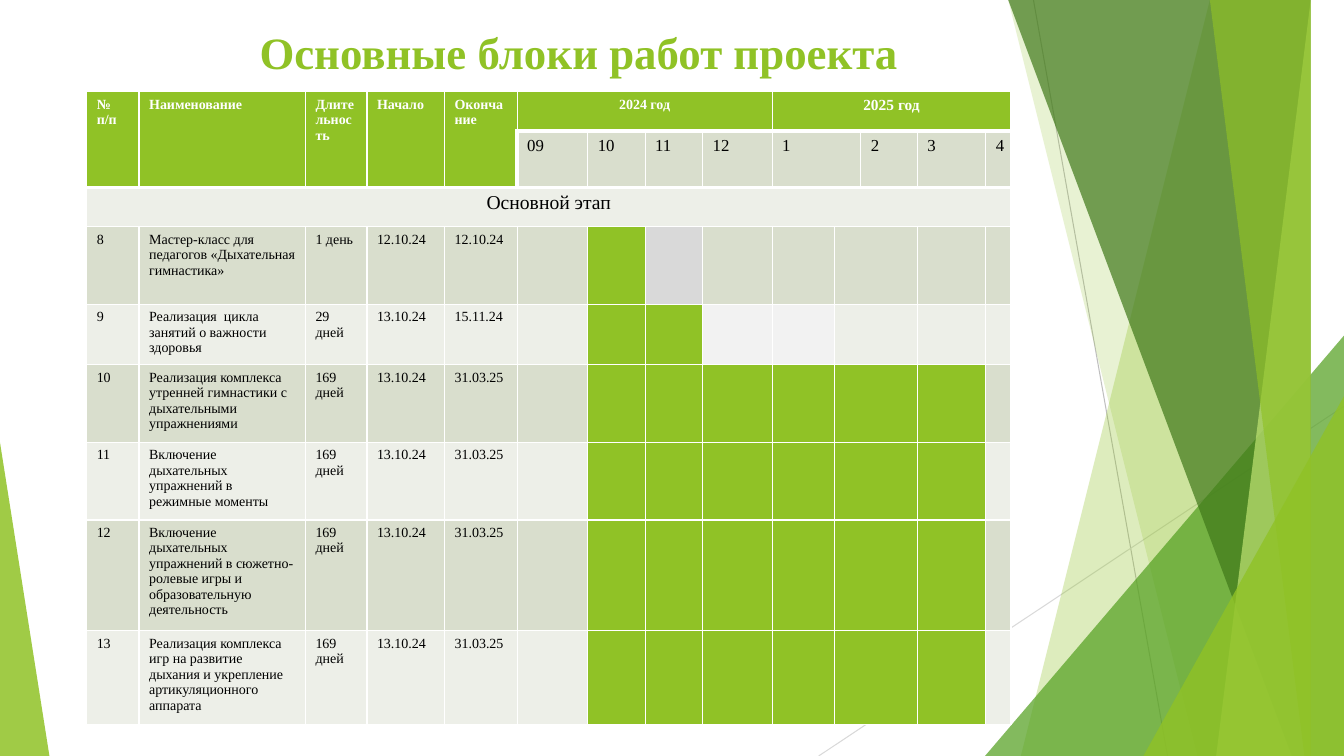
"""Build a project schedule slide with a two-year Gantt table."""
from dataclasses import dataclass
from typing import Optional

from lxml import etree
from pptx import Presentation
from pptx import util as u
from pptx.dml.color import RGBColor
from pptx.enum import shapes, text
from pptx.oxml import ns

FONT = "Times New Roman"
GREEN = RGBColor(0x90, 0xC2, 0x26)
MID_GREEN = RGBColor(0x54, 0xA0, 0x21)
DARK_GREEN = RGBColor(0x3F, 0x78, 0x19)
LIME = RGBColor(0xC0, 0xE4, 0x74)
BAND_DARK = RGBColor(0xD9, 0xDE, 0xCD)
BAND_LIGHT = RGBColor(0xED, 0xEF, 0xE8)
GREY = RGBColor(0xD9, 0xD9, 0xD9)
PALE_GREY = RGBColor(0xF2, 0xF2, 0xF2)
LINE_GREY = RGBColor(0xBF, 0xBF, 0xBF)
WHITE = RGBColor(0xFF, 0xFF, 0xFF)
BLACK = RGBColor(0, 0, 0)

WIDTH, HEIGHT, TOP = 13.33, 7.5, -0.01
COLUMNS = (0.52, 1.65, 0.61, 0.77, 0.72, 0.7, 0.57, 0.57, 0.69, 0.62, 0.26, 0.56, 0.68, 0.25)
ROWS = (0.39, 0.39, 0.39, 0.77, 0.6, 0.77, 0.77, 1.1, 0.93)


@dataclass
class Ray:
    start: tuple[float, float]
    end: tuple[float, float]
    color: RGBColor


@dataclass
class Blade:
    top_x: float
    bottom_x: float
    color: RGBColor
    opacity: int


@dataclass
class Wedge:
    left: float
    top: float
    width: float
    apex: float
    color: RGBColor
    opacity: int


@dataclass
class HeaderCell:
    row: int
    column: int
    label: str
    rows: int = 1
    columns: int = 1
    size: float = 10
    color: RGBColor = WHITE
    bold: bool = True
    align: Optional[text.PP_ALIGN] = None


@dataclass
class Task:
    number: int
    name: str
    duration: str
    start: str
    end: str
    last_column: int


DECORATION = (
    Ray((10.25, 0), (11.58, HEIGHT), LINE_GREY),
    Ray((WIDTH, 4.03), (8.12, HEIGHT), GREY),
    Blade(12.28, 10.04, GREEN, 30),
    Blade(10.5, 11.83, GREEN, 20),
    Wedge(9.77, 3.33, 3.56, 1, MID_GREEN, 72),
    Blade(10.21, 12.91, DARK_GREEN, 70),
    Blade(13.03, 11.92, LIME, 70),
    Blade(11.96, 13.18, GREEN, 65),
    Wedge(11.34, 3.93, 1.99, 1, GREEN, 80),
    Wedge(0, 4.39, 0.49, 0, GREEN, 85),
)
TITLES = ("№ п/п", "Наименование", "Длительность", "Начало", "Окончание")
MONTHS = {5: "09", 6: "10", 7: "11", 8: "12", 9: "1", 11: "2", 12: "3", 13: "4"}
HEADER = (
    *(HeaderCell(0, column, label, rows=2) for column, label in enumerate(TITLES)),
    HeaderCell(0, 5, "2024 год", columns=4, align=text.PP_ALIGN.CENTER),
    HeaderCell(0, 9, "2025 год", columns=5, size=11, align=text.PP_ALIGN.CENTER),
    *(HeaderCell(1, column, label, columns=2 if column == 9 else 1, size=12, color=BLACK, bold=False)
      for column, label in MONTHS.items()),
    HeaderCell(2, 0, "Основной этап", columns=14, size=14, color=BLACK, bold=False,
               align=text.PP_ALIGN.CENTER),
)
TASKS = (
    Task(8, "Мастер-класс для педагогов «Дыхательная гимнастика»", "1 день", "12.10.24", "12.10.24", 6),
    Task(9, "Реализация  цикла занятий о важности здоровья", "29\nдней", "13.10.24", "15.11.24", 7),
    Task(10, "Реализация комплекса утренней гимнастики с дыхательными упражнениями",
         "169\nдней", "13.10.24", "31.03.25", 12),
    Task(11, "Включение дыхательных упражнений в режимные моменты",
         "169\nдней", "13.10.24", "31.03.25", 12),
    Task(12, "Включение дыхательных упражнений в сюжетно-ролевые игры и образовательную деятельность",
         "169\nдней", "13.10.24", "31.03.25", 12),
    Task(13, "Реализация комплекса игр на развитие дыхания и укрепление артикуляционного аппарата",
         "169\nдней", "13.10.24", "31.03.25", 12),
)
SPECIAL_FILLS = {(3, 7): GREY, (4, 8): PALE_GREY, (4, 9): PALE_GREY}


def write(frame, content: str, *, size: float, color: RGBColor = BLACK, bold: bool = False,
          align: Optional[text.PP_ALIGN] = None) -> None:
    frame.text = content
    for paragraph in frame.paragraphs:
        paragraph.alignment = align
        for run in paragraph.runs:
            run.font.name, run.font.size, run.font.bold = FONT, u.Pt(size), bold
            run.font.color.rgb = color


def draw_ray(slide, ray: Ray) -> None:
    connector = slide.shapes.add_connector(
        shapes.MSO_CONNECTOR.STRAIGHT, *(u.Inches(value) for value in ray.start + ray.end))
    connector.line.color.rgb, connector.line.width = ray.color, u.Pt(0.75)
    etree.SubElement(connector.element.spPr, ns.qn("a:effectLst"))


def draw_facet(slide, facet: Blade | Wedge) -> None:
    if isinstance(facet, Blade):
        builder = slide.shapes.build_freeform(facet.top_x, TOP, scale=u.Inches(1))
        builder.add_line_segments([(WIDTH, TOP), (WIDTH, HEIGHT), (facet.bottom_x, HEIGHT)])
        shape = builder.convert_to_shape()
    else:
        shape = slide.shapes.add_shape(
            shapes.MSO_SHAPE.ISOSCELES_TRIANGLE, u.Inches(facet.left), u.Inches(facet.top),
            u.Inches(facet.width), u.Inches(HEIGHT - facet.top))
        shape.adjustments[0] = facet.apex
    shape.shadow.inherit = False
    shape.line.fill.background()
    shape.fill.solid()
    shape.fill.fore_color.rgb = facet.color
    color = shape.element.spPr.find(ns.qn("a:solidFill"))[0]
    etree.SubElement(color, ns.qn("a:alpha"), val=str(facet.opacity * 1000))


def style_cell(cell, row: int, column: int, color: RGBColor) -> None:
    cell.fill.solid()
    cell.fill.fore_color.rgb = color
    thick = {"L": (row, column) == (1, 5), "R": False, "T": row in (1, 2), "B": row == 0}
    properties = cell._tc.get_or_add_tcPr()
    for index, (side, is_thick) in enumerate(thick.items()):
        line = etree.Element(ns.qn(f"a:ln{side}"), w=str(u.Pt(3 if is_thick else 1)))
        fill = etree.SubElement(line, ns.qn("a:solidFill"))
        etree.SubElement(fill, ns.qn("a:srgbClr"), val=str(WHITE))
        properties.insert(index, line)


def cell_color(row: int, column: int) -> RGBColor:
    if row == 0 or (row == 1 and column < 5):
        return GREEN
    if row > 2 and 6 <= column <= TASKS[row - 3].last_column:
        return GREEN
    return SPECIAL_FILLS.get((row, column), BAND_DARK if row % 2 else BAND_LIGHT)


def draw_schedule(slide) -> None:
    table = slide.shapes.add_table(
        len(ROWS), len(COLUMNS), u.Inches(0.86), u.Inches(0.91),
        u.Inches(sum(COLUMNS)), u.Inches(sum(ROWS))).table
    for column, width in enumerate(COLUMNS):
        table.columns[column].width = u.Inches(width)
    for row, height in enumerate(ROWS):
        table.rows[row].height = u.Inches(height)
        for column in range(len(COLUMNS)):
            style_cell(table.cell(row, column), row, column, cell_color(row, column))
    for item in HEADER:
        cell = table.cell(item.row, item.column)
        if item.rows * item.columns > 1:
            cell.merge(table.cell(item.row + item.rows - 1, item.column + item.columns - 1))
        write(cell.text_frame, item.label, size=item.size, color=item.color, bold=item.bold, align=item.align)
    for row, task in enumerate(TASKS, 3):
        table.cell(row, 10).merge(table.cell(row, 11))
        for column, value in enumerate((str(task.number), task.name, task.duration, task.start, task.end)):
            write(table.cell(row, column).text_frame, value, size=10)


def main() -> None:
    presentation = Presentation()
    presentation.slide_width, presentation.slide_height = u.Inches(WIDTH), u.Inches(HEIGHT)
    slide = presentation.slides.add_slide(presentation.slide_layouts[5])
    for item in DECORATION:
        if isinstance(item, Ray):
            draw_ray(slide, item)
        else:
            draw_facet(slide, item)
    title = slide.shapes.title
    title.element.getparent().append(title.element)
    title.left, title.top, title.width, title.height = map(u.Inches, (1.04, 0.19, 9.4, 1.44))
    title.text_frame.auto_size = text.MSO_AUTO_SIZE.NONE
    title.text_frame.vertical_anchor = text.MSO_ANCHOR.TOP
    write(title.text_frame, "Основные блоки работ проекта", size=32, color=GREEN, bold=True,
          align=text.PP_ALIGN.CENTER)
    draw_schedule(slide)
    presentation.save("out.pptx")


if __name__ == "__main__":
    main()
